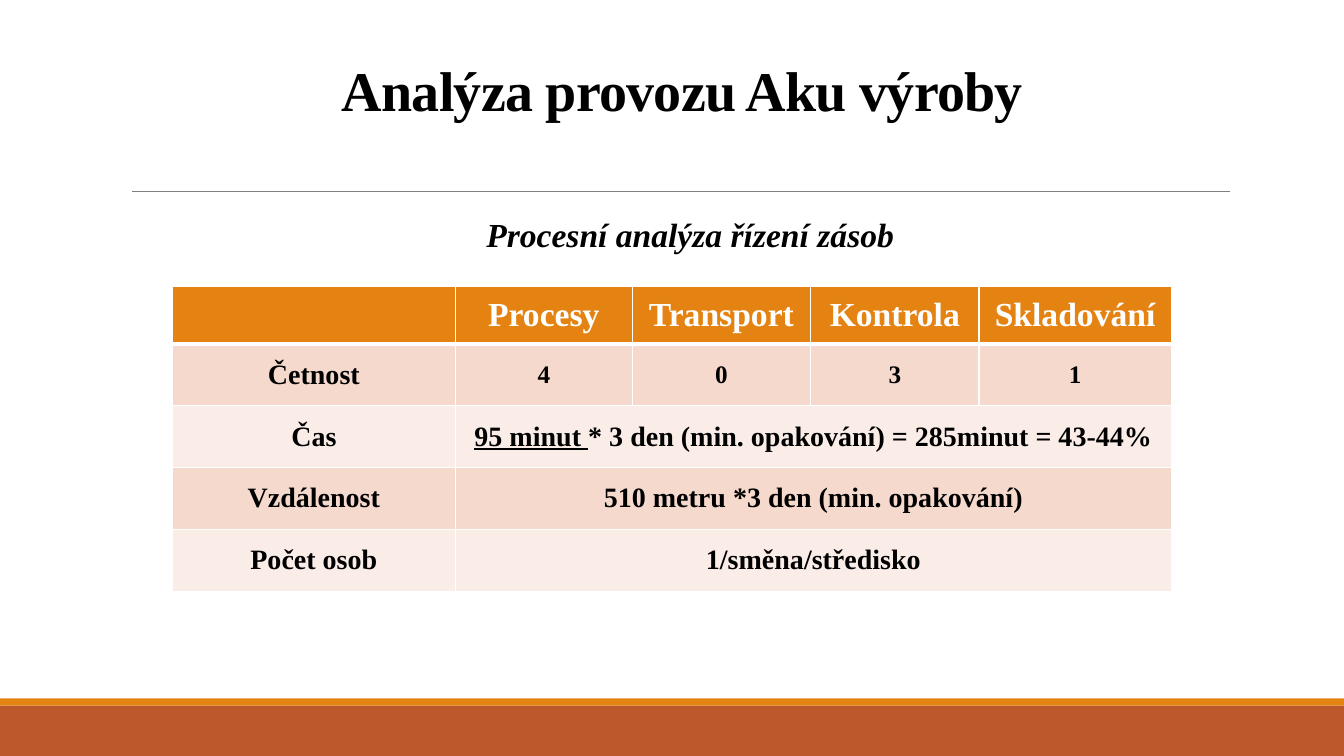
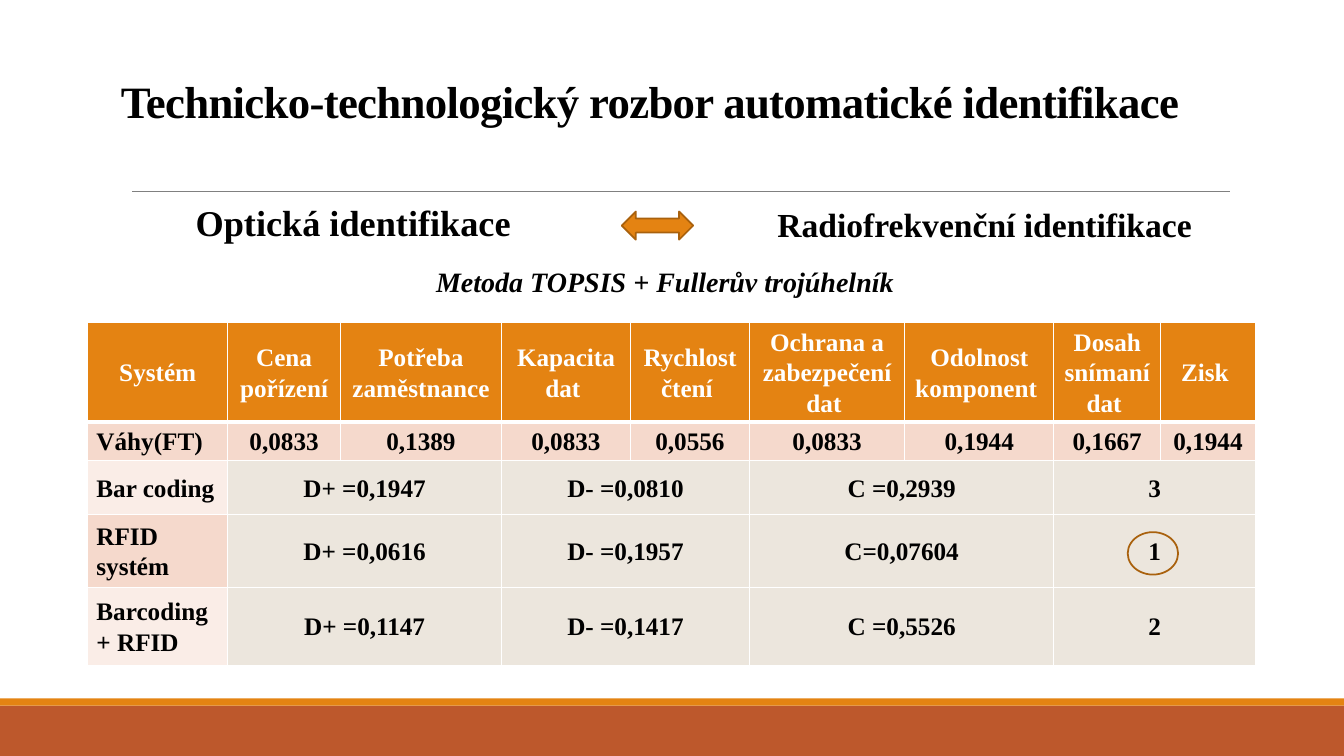
from lxml import etree
from pptx import Presentation
from pptx.dml.color import RGBColor
from pptx.enum import shapes, text
from pptx.oxml import ns
from pptx.util import Cm, Pt

FONT = "Times New Roman"
BLACK, WHITE, GREY = "000000", "FFFFFF", "808080"
ORANGE, RUST, OUTLINE = "E48312", "BD582C", "A9610D"
BANDS = ("FAEDE7", "F5D9CC")
RESULT = "ECE6DD"
LEFT, CENTER = text.PP_ALIGN.LEFT, text.PP_ALIGN.CENTER
WIDTH, HEIGHT = 33.87, 19.05

# Row: height, label size, value size, cells; short rows spread their values
# evenly over the columns. Underscores enclose underlined words.
STOCK_COLUMNS = (7.14, 4.45, 4.5, 4.24, 4.85)
STOCK_ROWS = [
    (1.45, 24, 24, ["", "Procesy", "Transport", "Kontrola", "Skladování"]),
    (1.56, 20, 18, ["Četnost", "4", "0", "3", "1"]),
    (1.56, 20, 20, ["Čas", "_95 minut _* 3 den (min. opakování) = 285minut = 43-44%"]),
    (1.56, 20, 20, ["Vzdálenost", "510 metru *3 den (min. opakování)"]),
    (1.56, 20, 20, ["Počet osob", "1/směna/středisko"]),
]

SYSTEM_COLUMNS = (3.53, 2.84, 4.06, 3.25, 3.0, 3.91, 3.76, 2.69, 2.39)
SYSTEM_ROWS = [
    (2.5, 18, 18, ["Systém", "Cena pořízení", "Potřeba zaměstnance", "Kapacita dat ",
                   "Rychlost čtení ", "Ochrana a zabezpečení dat ",
                   "Odolnost komponent ", "Dosah snímaní dat ", "Zisk "]),
    (0.97, 18, 18, ["Váhy(FT)", "0,0833", "0,1389", "0,0833", "0,0556",
                    "0,0833", "0,1944", "0,1667", "0,1944"]),
    (1.37, 18, 18, ["Bar coding", "D+ =0,1947", "D- =0,0810", "C =0,2939", "3"]),
    (1.83, 18, 18, ["RFID systém", "D+ =0,0616", "D- =0,1957", "C=0,07604", "1"]),
    (1.96, 18, 18, ["Barcoding\n+ RFID", "D+ =0,1147", "D- =0,1417", "C =0,5526", "2"]),
]


def rgb(color):
    return RGBColor.from_string(color)


def style(paragraph, size, color=BLACK, align=LEFT, spacing=None, italic=None):
    paragraph.alignment = align
    if spacing:
        paragraph.line_spacing = spacing
    font = paragraph.font
    font.name, font.size, font.bold, font.italic = FONT, Pt(size), True, italic
    font.color.rgb = rgb(color)


def add_shape(slide, kind, box, fill=None, line=None):
    shape = slide.shapes.add_shape(kind, *map(Cm, box))
    shape.shadow.inherit = False
    if fill:
        shape.fill.solid()
        shape.fill.fore_color.rgb = rgb(fill)
    else:
        shape.fill.background()
    if line:
        shape.line.color.rgb = rgb(line)
        shape.line.width = Pt(1.25)
    else:
        shape.line.fill.background()


def add_text(slide, words, box, size, sides=0, **look):
    frame = slide.shapes.add_textbox(*map(Cm, box)).text_frame
    frame.word_wrap = True
    frame.margin_left, frame.margin_right = Cm(sides), 0
    frame.text = words
    style(frame.paragraphs[0], size, **look)


def add_slide(prs, title, box, size):
    """Add a slide with its title, the rule below it and the bottom bands."""
    slide = prs.slides.add_slide(prs.slide_layouts[5])
    for top, height, color in ((17.78, 1.27, RUST), (17.6, 0.18, ORANGE)):
        add_shape(slide, shapes.MSO_SHAPE.RECTANGLE, (0, top, WIDTH, height), color)
    rule = slide.shapes.add_connector(
        shapes.MSO_CONNECTOR.STRAIGHT, Cm(3.33), Cm(4.82), Cm(31), Cm(4.82))
    rule.line.color.rgb = rgb(GREY)
    rule.line.width = Pt(0.5)
    etree.SubElement(rule._element.spPr, ns.qn("a:effectLst"))

    heading = slide.shapes.title
    heading.left, heading.top, heading.width, heading.height = map(Cm, box)
    frame = heading.text_frame
    frame.text = title
    frame.word_wrap = True
    frame.auto_size = text.MSO_AUTO_SIZE.NONE
    frame.vertical_anchor = text.MSO_ANCHOR.BOTTOM
    paragraph = frame.paragraphs[0]
    style(paragraph, size, spacing=0.85)
    paragraph.runs[0]._r.get_or_add_rPr().set("spc", "-50")
    return slide


def set_borders(cell, top=1, bottom=1):
    properties = cell._tc.get_or_add_tcPr()
    sides = (("lnL", 1), ("lnR", 1), ("lnT", top), ("lnB", bottom))
    for position, (side, points) in enumerate(sides):
        border = etree.Element(ns.qn(f"a:{side}"), w=str(Pt(points)))
        fill = etree.SubElement(border, ns.qn("a:solidFill"))
        etree.SubElement(fill, ns.qn("a:srgbClr"), val=WHITE)
        properties.insert(position, border)


def fill_cell(cell, words, size, color, align, spacing):
    cell.vertical_anchor = text.MSO_ANCHOR.MIDDLE
    frame = cell.text_frame
    for index, line in enumerate(words.split("\n")):
        paragraph = frame.add_paragraph() if index else frame.paragraphs[0]
        style(paragraph, size, color, align, spacing)
        for part, piece in enumerate(line.split("_")):
            if piece:
                run = paragraph.add_run()
                run.text = piece
                if part % 2:
                    run.font.underline = True


def add_table(slide, left, top, columns, rows, label_align=CENTER,
              spacing=None, span_fill=None, margins=(0.25, 0.13)):
    size = (sum(columns), sum(row[0] for row in rows))
    table = slide.shapes.add_table(
        len(rows), len(columns), *map(Cm, (left, top, *size))).table
    for column, width in zip(table.columns, columns):
        column.width = Cm(width)
    for r, (height, label_size, value_size, words) in enumerate(rows):
        table.rows[r].height = Cm(height)
        span = (len(columns) - 1) // (len(words) - 1)
        for c in range(len(columns)):
            cell = table.cell(r, c)
            cell.margin_left = cell.margin_right = Cm(margins[0])
            cell.margin_top = cell.margin_bottom = Cm(margins[1])
            color = ORANGE if r == 0 else BANDS[r % 2]
            if c and span > 1 and span_fill:
                color = span_fill
            cell.fill.solid()
            cell.fill.fore_color.rgb = rgb(color)
            set_borders(cell, top=3 if r == 1 else 1, bottom=3 if r == 0 else 1)
        for index, entry in enumerate(words):
            c = 1 + (index - 1) * span if index else 0
            cell = table.cell(r, c)
            if index and span > 1:
                cell.merge(table.cell(r, c + span - 1))
            fill_cell(cell, entry, value_size if index else label_size,
                      BLACK if r else WHITE,
                      CENTER if index or r == 0 else label_align, spacing)


def add_stock_analysis(prs):
    slide = add_slide(prs, "Analýza provozu Aku výroby", (8.36, 1.14, 17.86, 2.08), 40)
    add_text(slide, "Procesní analýza řízení zásob", (10.41, 5.38, 13.72, 1.4), 24,
             sides=0.25, align=CENTER, spacing=0.9, italic=True)
    add_table(slide, 4.34, 7.21, STOCK_COLUMNS, STOCK_ROWS)


def add_identification(prs):
    slide = add_slide(prs, "Technicko-technologický rozbor automatické identifikace",
                      (2.79, 0.61, 28.02, 2.74), 32)
    add_text(slide, "Radiofrekvenční identifikace", (18.82, 5.13, 11.99, 1.09), 24,
             align=CENTER, spacing=0.9)
    add_text(slide, "Optická identifikace", (1.96, 5.21, 13.89, 1.09), 25.9,
             align=CENTER, spacing=0.7)
    add_shape(slide, shapes.MSO_SHAPE.LEFT_RIGHT_ARROW, (15.67, 5.33, 1.8, 0.71),
              ORANGE, OUTLINE)
    add_table(slide, 2.21, 8.13, SYSTEM_COLUMNS, SYSTEM_ROWS, label_align=LEFT,
              spacing=Pt(21.6), span_fill=RESULT, margins=(0.22, 0.1))
    add_shape(slide, shapes.MSO_SHAPE.OVAL, (28.42, 13.41, 1.27, 1.07), line=OUTLINE)
    add_text(slide, "Metoda TOPSIS + Fullerův trojúhelník", (10.74, 6.53, 12.8, 1.12),
             20, sides=0.25, italic=True)


def main():
    prs = Presentation()
    prs.slide_width, prs.slide_height = Cm(WIDTH), Cm(HEIGHT)
    add_stock_analysis(prs)
    add_identification(prs)
    prs.save("out.pptx")


if __name__ == "__main__":
    main()
